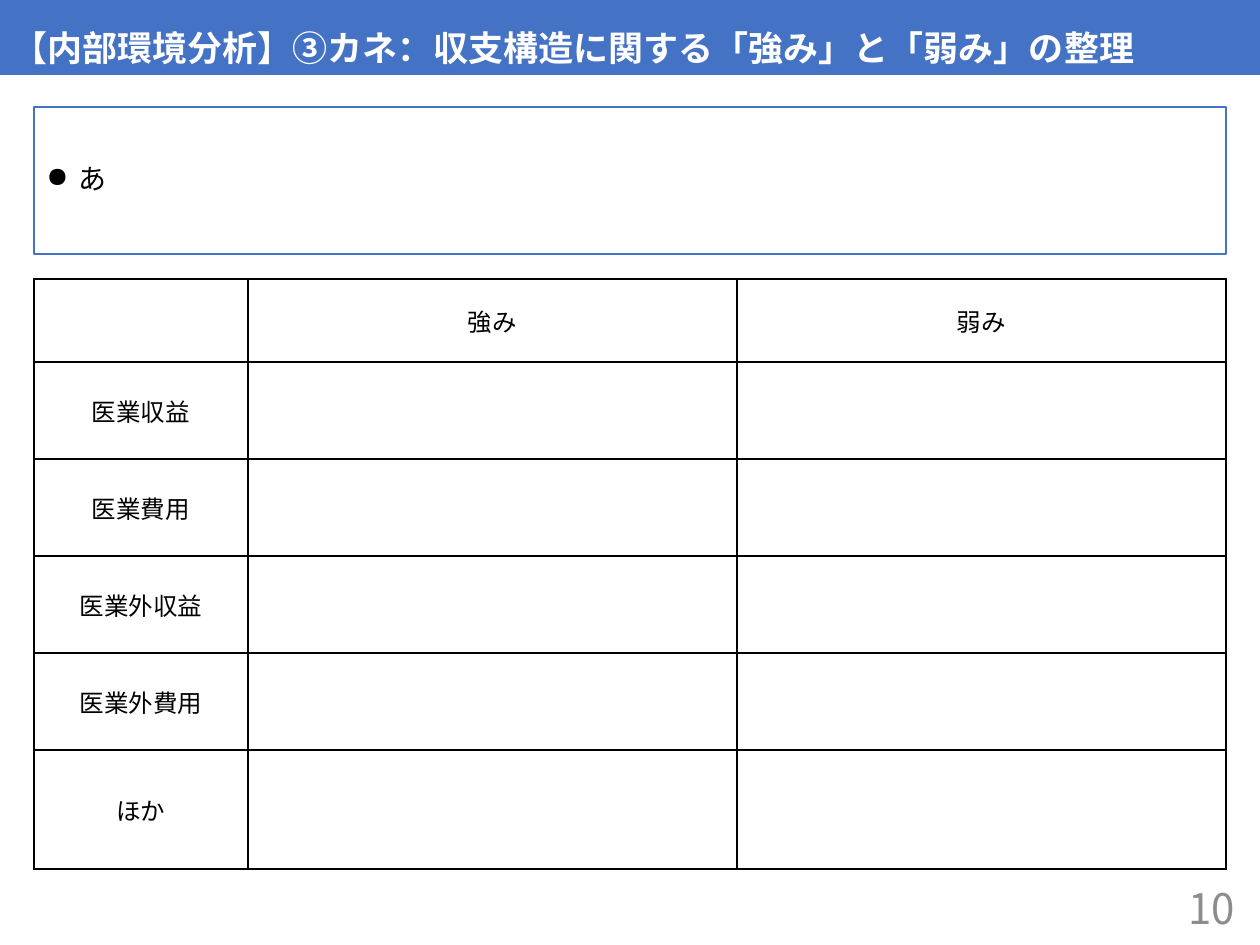
"""Build a slide that sorts financial strengths and weaknesses in a table."""
from lxml import etree
from pptx import Presentation
from pptx.dml.color import RGBColor
from pptx.enum.shapes import MSO_SHAPE
from pptx.enum.text import MSO_ANCHOR, PP_ALIGN
from pptx.oxml.ns import qn
from pptx.util import Pt

RECT = MSO_SHAPE.RECTANGLE
MIDDLE, BOTTOM = MSO_ANCHOR.MIDDLE, MSO_ANCHOR.BOTTOM
LEFT, CENTER, RIGHT = PP_ALIGN.LEFT, PP_ALIGN.CENTER, PP_ALIGN.RIGHT

FONT = "Noto Sans CJK JP"
COLORS = {"blue": "4472C4", "white": "FFFFFF", "black": "000000", "gray": "8C8C8C"}
TITLE = "【内部環境分析】③カネ：収支構造に関する「強み」と「弱み」の整理"
NOTE = "あ"
PAGE = "10"
HEADS = ["", "強み", "弱み"]
ITEMS = ["医業収益", "医業費用", "医業外収益", "医業外費用", "ほか"]

WIDTH, HEIGHT = 1260, 945
EDGE = 34
COLS = [214, 489, 489]
ROWS = [83] + [97] * 4 + [119]
INDENT = 32


def px(n):
    return round(n * 914400 / 126)


def color(name):
    return RGBColor.from_string(COLORS[name])


def write(frame, text, size, tone, align=LEFT, bold=False):
    para = frame.paragraphs[0]
    para.alignment = align
    run = para.add_run()
    run.text = text
    font = run.font
    font.size, font.bold, font.name = Pt(size), bold, FONT
    font.color.rgb = color(tone)
    etree.SubElement(font._element, qn("a:ea"), typeface=FONT)
    return para


def add_box(slide, box, fill, line=None, anchor=MIDDLE):
    shape = slide.shapes.add_shape(RECT, *map(px, box))
    shape.shadow.inherit = False
    shape.fill.solid()
    shape.fill.fore_color.rgb = color(fill)
    if line:
        shape.line.color.rgb = color(line)
        shape.line.width = Pt(1.5)
    else:
        shape.line.fill.background()
    frame = shape.text_frame
    frame.word_wrap = True
    frame.vertical_anchor = anchor
    return frame


def add_bullet(para):
    props = para._p.get_or_add_pPr()
    props.set("marL", str(px(INDENT)))
    props.set("indent", str(-px(INDENT)))
    etree.SubElement(props, qn("a:buChar"), char="●")


def add_border(cell):
    props = cell._tc.get_or_add_tcPr()
    for spot, side in enumerate(("lnL", "lnR", "lnT", "lnB")):
        line = etree.Element(qn(f"a:{side}"), w=str(Pt(1)))
        fill = etree.SubElement(line, qn("a:solidFill"))
        etree.SubElement(fill, qn("a:srgbClr"), val=COLORS["black"])
        props.insert(spot, line)


def add_grid(slide, top):
    data = [HEADS] + [[item, "", ""] for item in ITEMS]
    box = (EDGE, top, sum(COLS), sum(ROWS))
    table = slide.shapes.add_table(len(ROWS), len(COLS), *map(px, box)).table
    for col, width in zip(table.columns, COLS):
        col.width = px(width)
    for row, height, texts in zip(table.rows, ROWS, data):
        row.height = px(height)
        for cell, text in zip(row.cells, texts):
            cell.fill.background()
            cell.vertical_anchor = MIDDLE
            add_border(cell)
            if text:
                write(cell.text_frame, text, 14, "black", CENTER)


def main():
    deck = Presentation()
    deck.slide_width, deck.slide_height = px(WIDTH), px(HEIGHT)
    slide = deck.slides.add_slide(deck.slide_layouts[6])

    head = add_box(slide, (0, 0, WIDTH, 75), "blue", anchor=BOTTOM)
    write(head, TITLE, 20, "white", bold=True).line_spacing = 0.9

    body = add_box(slide, (EDGE, 107, sum(COLS), 147), "white", "blue")
    para = write(body, NOTE, 16, "black")
    para.line_spacing = 0.9
    para.space_before = Pt(10)
    add_bullet(para)

    add_grid(slide, 279)

    foot = slide.shapes.add_textbox(*map(px, (964, 883, 283, 50))).text_frame
    foot.word_wrap = True
    foot.vertical_anchor = MIDDLE
    write(foot, PAGE, 24, "gray", RIGHT)
    deck.save("out.pptx")


if __name__ == "__main__":
    main()
